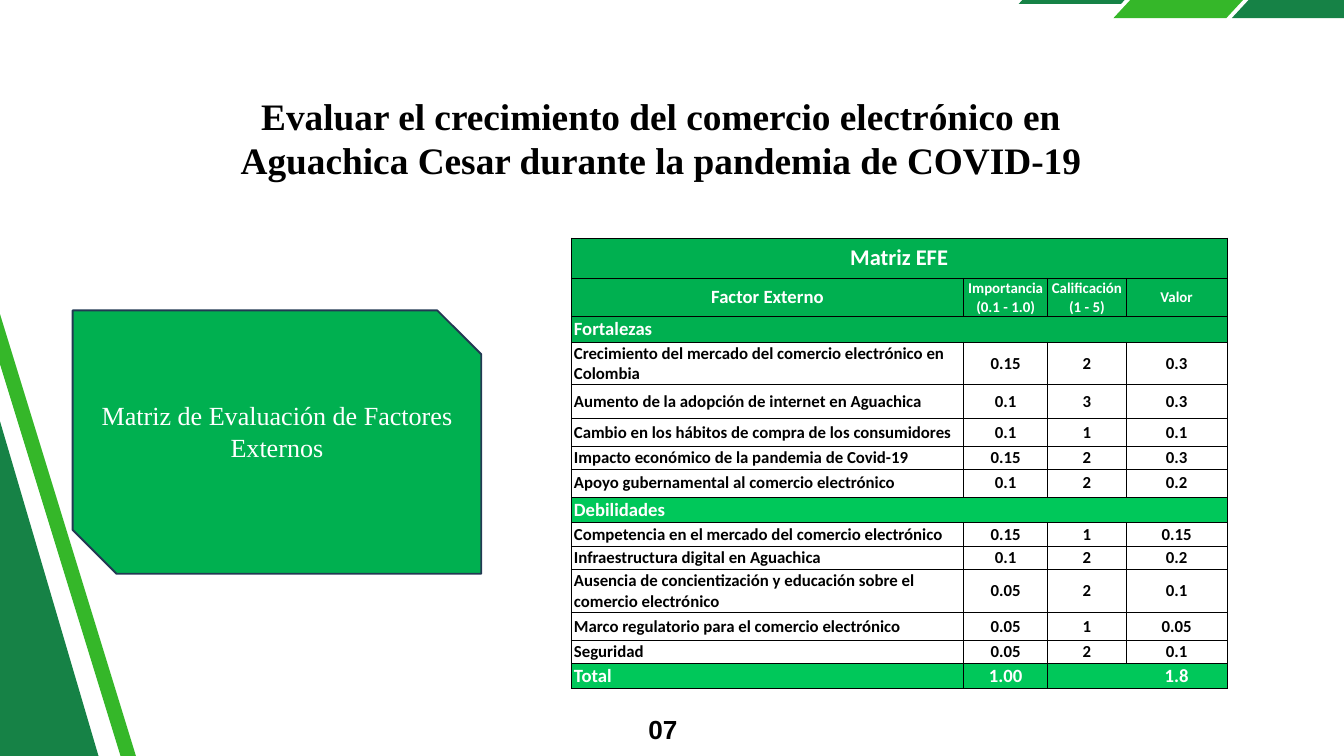
from dataclasses import dataclass

from lxml.etree import SubElement
from pptx import Presentation
from pptx.dml.color import RGBColor
from pptx.enum.shapes import MSO_SHAPE
from pptx.enum.text import MSO_ANCHOR, PP_ALIGN
from pptx.oxml.ns import qn
from pptx.util import Pt


@dataclass(frozen=True)
class Theme:
    # Colours
    dark: str = "168246"
    light: str = "35B729"
    green: str = "00B050"
    bright: str = "00C85A"
    outline: str = "233953"
    black: str = "000000"
    white: str = "FFFFFF"
    # Fonts and type sizes
    serif: str = "Times New Roman"
    sans: str = "Arial"
    grid: str = "Calibri"
    title: int = 40
    label: int = 28
    caption: int = 24
    section: int = 20
    body: int = 18
    small: int = 16


class SlideBuilder:
    def __init__(self, slide, theme):
        self.s = slide
        self.t = theme

    def paint(self, sp, fill, line=None):
        sp.shadow.inherit = False
        sp.fill.solid()
        sp.fill.fore_color.rgb = RGBColor.from_string(fill)
        if line:
            sp.line.color.rgb = RGBColor.from_string(line)
            sp.line.width = Pt(2)
        else:
            sp.line.fill.background()

    def add_text(self, tf, text, font, size, color, align, bold=False):
        p = tf.paragraphs[0]
        p.alignment = align
        r = p.add_run()
        r.text = text
        r.font.name = font
        r.font.size = Pt(size)
        r.font.bold = bold
        r.font.color.rgb = RGBColor.from_string(color)
        return p

    def band(self, x, y, w, h, color, skew=0, rotation=0):
        corners = [(x + w, y), (x + w - skew, y + h), (x, y + h)]
        fb = self.s.shapes.build_freeform(Pt(x + skew), Pt(y), scale=1.0)
        fb.add_line_segments([(Pt(a), Pt(b)) for a, b in corners], close=True)
        sp = fb.convert_to_shape()
        sp.rotation = rotation
        self.paint(sp, color)

    def text(self, x, y, w, h, text, font, size, align):
        tf = self.s.shapes.add_textbox(Pt(x), Pt(y), Pt(w), Pt(h)).text_frame
        tf.word_wrap = True
        tf.margin_left = tf.margin_right = tf.margin_top = tf.margin_bottom = 0
        return self.add_text(tf, text, font, size, self.t.black, align, bold=True)

    def card(self, x, y, w, h, text):
        sp = self.s.shapes.add_shape(MSO_SHAPE.SNIP_2_DIAG_RECTANGLE, Pt(x), Pt(y), Pt(w), Pt(h))
        self.paint(sp, self.t.green, self.t.outline)
        tf = sp.text_frame
        tf.word_wrap = True
        tf.vertical_anchor = MSO_ANCHOR.MIDDLE
        tf.margin_bottom = Pt(27)
        self.add_text(tf, text, self.t.serif, self.t.label, self.t.white, PP_ALIGN.CENTER)

    def border(self, cell):
        tcPr = cell._tc.get_or_add_tcPr()
        for side in ("a:lnL", "a:lnR", "a:lnT", "a:lnB"):
            ln = SubElement(tcPr, qn(side), w=str(Pt(0.75)))
            fill = SubElement(ln, qn("a:solidFill"))
            SubElement(fill, qn("a:srgbClr"), val=self.t.black)

    def cell(self, cell, text, size, fill, align):
        cell.vertical_anchor = MSO_ANCHOR.MIDDLE
        cell.margin_left = cell.margin_right = Pt(2.9)
        cell.margin_top = cell.margin_bottom = Pt(1.4)
        self.border(cell)
        if fill:
            cell.fill.solid()
            cell.fill.fore_color.rgb = RGBColor.from_string(fill)
        else:
            cell.fill.background()
        if text:
            color = self.t.white if fill else self.t.black
            self.add_text(cell.text_frame, text, self.t.grid, size, color, align, bold=True)

    def table(self, x, y, widths, rows):
        heights = [row[0] for row in rows]
        tbl = self.s.shapes.add_table(len(rows), len(widths), Pt(x), Pt(y),
                                      Pt(sum(widths)), Pt(sum(heights))).table
        tbl.first_row = tbl.horz_banding = False
        for col, width in zip(tbl.columns, widths):
            col.width = Pt(width)
        for i, (height, kind, texts) in enumerate(rows):
            tbl.rows[i].height = Pt(height)
            size, fill = {
                "caption": (self.t.caption, self.t.green),
                "header": (self.t.small, self.t.green),
                "strengths": (self.t.section, self.t.green),
                "weaknesses": (self.t.section, self.t.bright),
                "total": (self.t.section, self.t.bright),
                "factor": (self.t.body, None),
            }[kind]
            for j in range(len(widths)):
                text = texts[j] if j < len(texts) else ""
                heading = kind in ("caption", "header")
                align = PP_ALIGN.CENTER if j or heading else PP_ALIGN.LEFT
                first_header = kind == "header" and j == 0
                self.cell(tbl.cell(i, j), text, self.t.section if first_header else size, fill, align)
            if len(texts) == 1:
                tbl.cell(i, 0).merge(tbl.cell(i, len(widths) - 1))
            elif kind == "total":
                # The total sits under the last column of the merged pair
                tbl.cell(i, 2).merge(tbl.cell(i, 3))
                tbl.cell(i, 2).margin_left = Pt(widths[2] + 2.9)


# Row height, row kind, cell texts
ROWS = [
    (43.2, "caption", ["Matriz EFE"]),
    (41, "header", ["Factor Externo", "Importancia (0.1 - 1.0)", "Calificación (1 - 5)", "Valor"]),
    (27, "strengths", ["Fortalezas"]),
    (46, "factor", ["Crecimiento del mercado del comercio electrónico en Colombia", "0.15", "2", "0.3"]),
    (36, "factor", ["Aumento de la adopción de internet en Aguachica", "0.1", "3", "0.3"]),
    (30, "factor", ["Cambio en los hábitos de compra de los consumidores", "0.1", "1", "0.1"]),
    (24.5, "factor", ["Impacto económico de la pandemia de Covid-19", "0.15", "2", "0.3"]),
    (30, "factor", ["Apoyo gubernamental al comercio electrónico", "0.1", "2", "0.2"]),
    (27, "weaknesses", ["Debilidades"]),
    (26, "factor", ["Competencia en el mercado del comercio electrónico", "0.15", "1", "0.15"]),
    (24.5, "factor", ["Infraestructura digital en Aguachica", "0.1", "2", "0.2"]),
    (45, "factor", ["Ausencia de concientización y educación sobre el comercio electrónico",
                    "0.05", "2", "0.1"]),
    (30, "factor", ["Marco regulatorio para el comercio electrónico", "0.05", "1", "0.05"]),
    (24.5, "factor", ["Seguridad", "0.05", "2", "0.1"]),
    (27, "total", ["Total", "1.00", "1.8"]),
]


def main():
    prs = Presentation()
    prs.slide_width, prs.slide_height = Pt(1440), Pt(810)
    t = Theme()
    b = SlideBuilder(prs.slides.add_slide(prs.slide_layouts[6]), t)

    # Slanted bands at the top right
    b.band(1091.5, -62, 170.6, 66.2, t.dark, skew=61)
    for x, color in ((1193, t.light), (1319.8, t.dark)):
        b.band(x, -76.3, 209.5, 95.7, color, skew=88.6)

    # Diagonal stripes at the lower left
    b.band(-726.5, 448.6, 1181.5, 360.7, t.dark, rotation=253.6)
    b.band(-509.8, 618.5, 1181.5, 15.8, t.light, rotation=252.9)

    # Title and page number
    b.text(204.5, 99.4, 1007.3, 97.2,
           "Evaluar el crecimiento del comercio electrónico en Aguachica Cesar "
           "durante la pandemia de COVID-19", t.serif, t.title, PP_ALIGN.CENTER)
    p = b.text(685.4, 758.9, 40.3, 36, "07", t.sans, t.label, PP_ALIGN.RIGHT)
    p.line_spacing = Pt(39.2)

    # Topic card and evaluation matrix
    b.card(77.8, 332.6, 437.8, 282.2, "Matriz de Evaluación de Factores Externos")
    b.table(612, 254.9, [420.5, 90, 84.2, 108], ROWS)

    prs.save("out.pptx")


if __name__ == "__main__":
    main()
